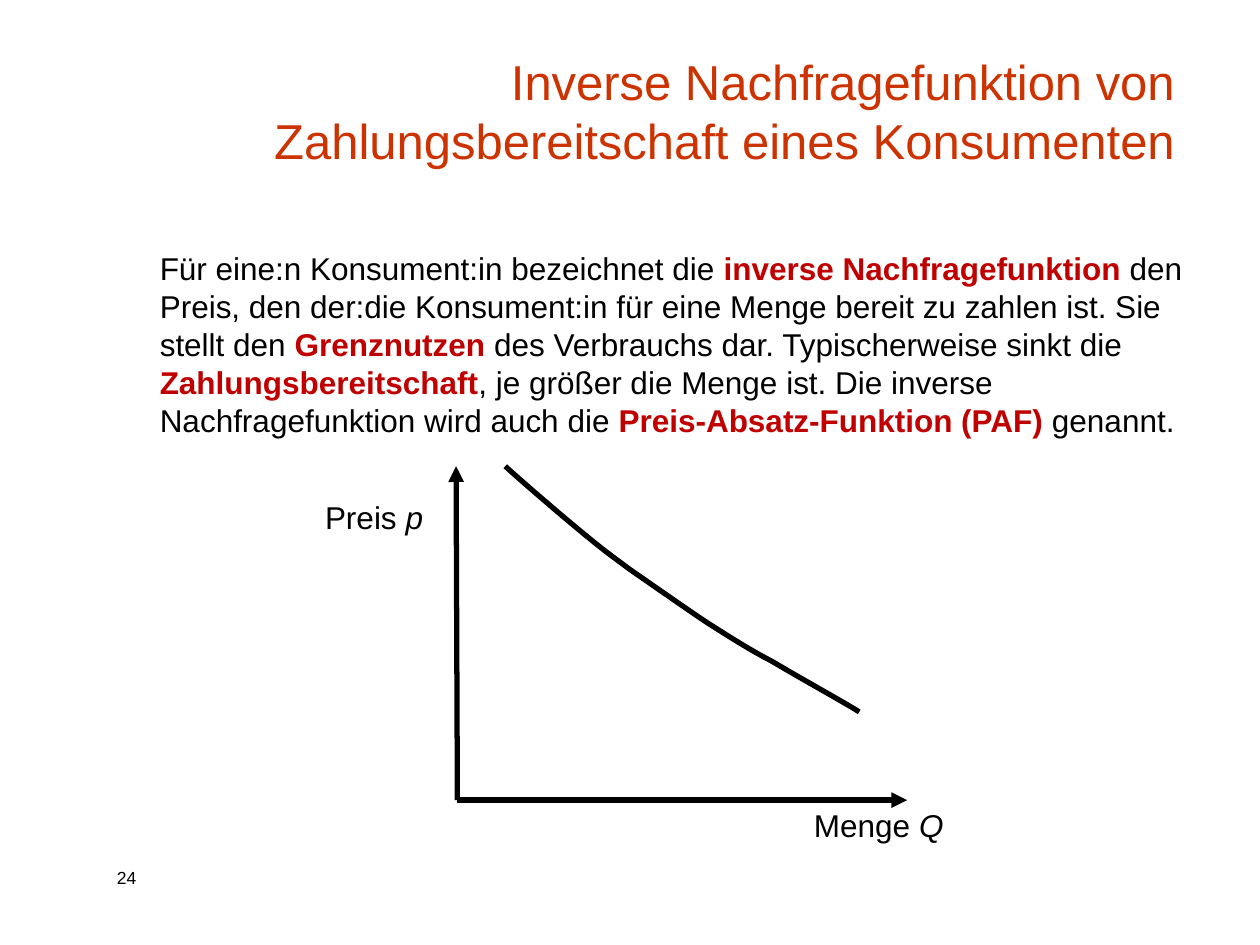
from lxml.etree import SubElement
from pptx import Presentation
from pptx.dml.color import RGBColor
from pptx.enum.shapes import MSO_CONNECTOR
from pptx.enum.text import MSO_ANCHOR as Anchor, PP_ALIGN as Align
from pptx.oxml.ns import qn
from pptx.util import Inches, Pt

WIDTH, HEIGHT = 10, 7.5
BLACK, ORANGE, RED = "000000", "CC3300", "C00000"
STEPS = 10  # points sampled on each curve segment


def color(hex_code):
    return RGBColor.from_string(hex_code)


def add_text(slide, box, runs, size, ink=BLACK, inset=(0.1, 0.05),
             align=Align.LEFT, anchor=Anchor.TOP):
    """Place one paragraph; runs are (text, style), style '', 'key' or 'italic'."""
    frame = slide.shapes.add_textbox(*map(Inches, box)).text_frame
    frame.word_wrap = True
    frame.vertical_anchor = anchor
    frame.margin_left = frame.margin_right = Inches(inset[0])
    frame.margin_top = frame.margin_bottom = Inches(inset[1])
    paragraph = frame.paragraphs[0]
    paragraph.alignment = align
    paragraph.font.name, paragraph.font.size = "Arial", Pt(size)
    paragraph.font.color.rgb = color(ink)
    for text, style in runs:
        run = paragraph.add_run()
        run.text = text
        if style == "key":
            run.font.bold = True
            run.font.color.rgb = color(RED)
        elif style == "italic":
            run.font.italic = True


def set_stroke(line):
    line.color.rgb = color(BLACK)
    line.width = Pt(3)


def add_axis(slide, start, end):
    axis = slide.shapes.add_connector(
        MSO_CONNECTOR.STRAIGHT, *map(Inches, (*start, *end)))
    set_stroke(axis.line)
    SubElement(axis.line._get_or_add_ln(), qn("a:tailEnd"), type="triangle")
    SubElement(axis._element.spPr, qn("a:effectLst"))


def bezier_point(corners, t):
    weights = ((1 - t) ** 3, 3 * t * (1 - t) ** 2, 3 * t * t * (1 - t), t ** 3)
    return tuple(Inches(sum(w * c for w, c in zip(weights, axis)))
                 for axis in zip(*corners))


def add_demand_curve(slide, knots):
    """Draw a smooth line through chained cubic segments."""
    points = [bezier_point(knots[i:i + 4], step / STEPS)
              for i in range(0, len(knots) - 1, 3)
              for step in range(1, STEPS + 1)]
    # Whole EMU, since the builder rounds its coordinates
    builder = slide.shapes.build_freeform(*map(Inches, knots[0]))
    builder.add_line_segments(points, close=False)
    curve = builder.convert_to_shape()
    curve.shadow.inherit = False
    curve.fill.background()
    set_stroke(curve.line)


def add_diagram(slide, box):
    """Price-quantity diagram; box spans the two axes."""
    left, top, width, height = box
    origin = (left, top + height)

    # Axes and their labels
    add_axis(slide, origin, (left + width, top + height))
    add_axis(slide, origin, (left - 0.01, top))
    add_text(slide, (left - 1.05, top + 0.25, 1.3, 0.3),
             [("Preis", ""), (" p", "italic")], 18, inset=(0, 0))
    add_text(slide, (left + width - 0.74, top + height + 0.05, 1.11, 0.35),
             [("Menge", ""), (" Q", "italic")], 18, inset=(0, 0))

    # Falling demand curve, offsets from the diagram's corner
    offsets = [(3.19, 1.95), (3.08, 1.88), (2.7, 1.67), (2.5, 1.55),
               (2.29, 1.44), (2.17, 1.36), (1.98, 1.24),
               (1.8, 1.12), (1.53, 0.93), (1.37, 0.82),
               (1.21, 0.7), (1.19, 0.69), (1.02, 0.55),
               (0.86, 0.42), (0.51, 0.12), (0.38, 0)]
    add_demand_curve(slide, [(left + x, top + y) for x, y in offsets])


def add_definition(slide, box):
    add_text(slide, box, [
        ("Für eine:n Konsument:in bezeichnet die ", ""),
        ("inverse Nachfragefunktion ", "key"),
        ("den Preis, den der:die Konsument:in für eine Menge bereit zu "
         "zahlen ist. Sie stellt den ", ""),
        ("Grenznutzen", "key"),
        (" des Verbrauchs dar. Typischerweise sinkt die ", ""),
        ("Zahlungsbereitschaft", "key"),
        (", je größer die Menge ist. Die inverse Nachfragefunktion wird "
         "auch die ", ""),
        ("Preis-Absatz-Funktion (PAF) ", "key"),
        ("genannt.", ""),
    ], 18)


def add_title(slide, box):
    title = "Inverse Nachfragefunktion von Zahlungsbereitschaft eines Konsumenten"
    add_text(slide, box, [(title, "")], 28, ORANGE,
             align=Align.RIGHT, anchor=Anchor.BOTTOM)


def main():
    deck = Presentation()
    deck.slide_width, deck.slide_height = Inches(WIDTH), Inches(HEIGHT)
    slide = deck.slides.add_slide(deck.slide_layouts[6])
    add_text(slide, (0.83, 6.83, 0.67, 0.27), [("24", "")], 10)
    add_title(slide, (1.87, 0.42, 7.55, 0.97))
    add_diagram(slide, (3.63, 3.7, 3.57, 2.65))
    add_definition(slide, (1.17, 1.93, 8.53, 1.62))
    deck.save("out.pptx")


if __name__ == "__main__":
    main()
